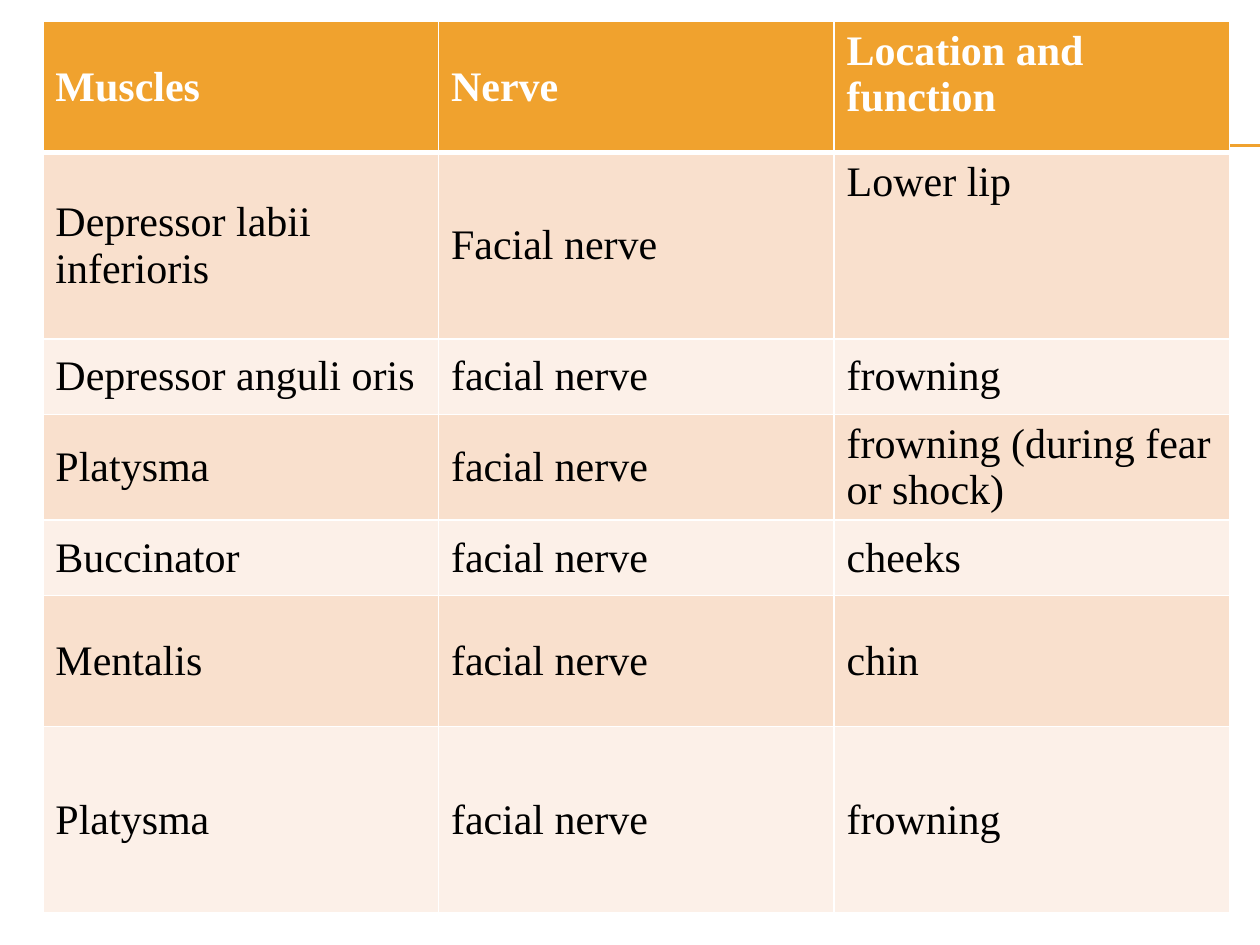
from lxml.etree import SubElement
from pptx import Presentation
from pptx.dml.color import RGBColor
from pptx.enum.shapes import MSO_CONNECTOR
from pptx.enum.text import MSO_ANCHOR
from pptx.oxml.ns import qn
from pptx.util import Inches, Pt

ORANGE = RGBColor(0xF0, 0xA2, 0x2E)
PEACH = RGBColor(0xF9, 0xE0, 0xCD)
CREAM = RGBColor(0xFC, 0xF0, 0xE8)
WHITE = RGBColor(0xFF, 0xFF, 0xFF)
BLACK = RGBColor(0x00, 0x00, 0x00)
FONT = "Times New Roman"

ROWS = [
    (1.04, "Muscles", "Nerve", "Location and function"),
    (1.48, "Depressor labii inferioris", "Facial nerve", "Lower lip"),
    (0.6, "Depressor anguli oris", "facial nerve", "frowning"),
    (0.6, "Platysma", "facial nerve", "frowning (during fear or shock)"),
    (0.6, "Buccinator", "facial nerve", "cheeks"),
    (1.04, "Mentalis", "facial nerve", "chin"),
    (1.48, "Platysma", "facial nerve", "frowning"),
]
COLUMN_WIDTH = 3.14
TOP_ALIGNED = {(0, 2), (1, 2)}


def add_rule(page, y):
    rule = page.shapes.add_connector(
        MSO_CONNECTOR.STRAIGHT, Inches(0.56), Inches(y), Inches(10), Inches(y))
    rule.line.color.rgb = ORANGE
    rule.line.width = Pt(0.75)
    SubElement(rule.element.spPr, qn("a:effectLst"))


def add_border(cell, side, width):
    properties = cell._tc.get_or_add_tcPr()
    line = SubElement(properties, qn(f"a:ln{side}"), w=str(Pt(width)))
    fill = SubElement(line, qn("a:solidFill"))
    SubElement(fill, qn("a:srgbClr"), val=str(WHITE))


def write_text(cell, text, color=BLACK, bold=False, anchor=MSO_ANCHOR.MIDDLE):
    cell.vertical_anchor = anchor
    span = cell.text_frame.paragraphs[0].add_run()
    span.text = text
    span.font.name = FONT
    span.font.size = Pt(24)
    span.font.bold = bold
    span.font.color.rgb = color


def format_cell(cell, text, row, column):
    header = row == 0
    widths = {"L": 1, "R": 1, "T": 3 if row == 1 else 1, "B": 3 if header else 1}
    for side, width in widths.items():
        add_border(cell, side, width)
    cell.fill.solid()
    cell.fill.fore_color.rgb = ORANGE if header else PEACH if row % 2 else CREAM
    anchor = MSO_ANCHOR.TOP if (row, column) in TOP_ALIGNED else MSO_ANCHOR.MIDDLE
    write_text(cell, text, color=WHITE if header else BLACK, bold=header, anchor=anchor)


def add_muscle_table(page):
    column_count = len(ROWS[0]) - 1
    total_height = sum(height for height, *_ in ROWS)
    table = page.shapes.add_table(
        len(ROWS), column_count, Inches(0.34), Inches(0.17),
        Inches(COLUMN_WIDTH * column_count), Inches(total_height)).table
    for column in table.columns:
        column.width = Inches(COLUMN_WIDTH)
    for row, (height, *texts) in enumerate(ROWS):
        table.rows[row].height = Inches(height)
        for column, text in enumerate(texts):
            format_cell(table.cell(row, column), text, row, column)


def main():
    deck = Presentation()
    deck.slide_width = Inches(10)
    deck.slide_height = Inches(7.5)
    page = deck.slides.add_slide(deck.slide_layouts[6])
    for y in (1.15, 1.16):
        add_rule(page, y)
    add_muscle_table(page)
    deck.save("out.pptx")


if __name__ == "__main__":
    main()
